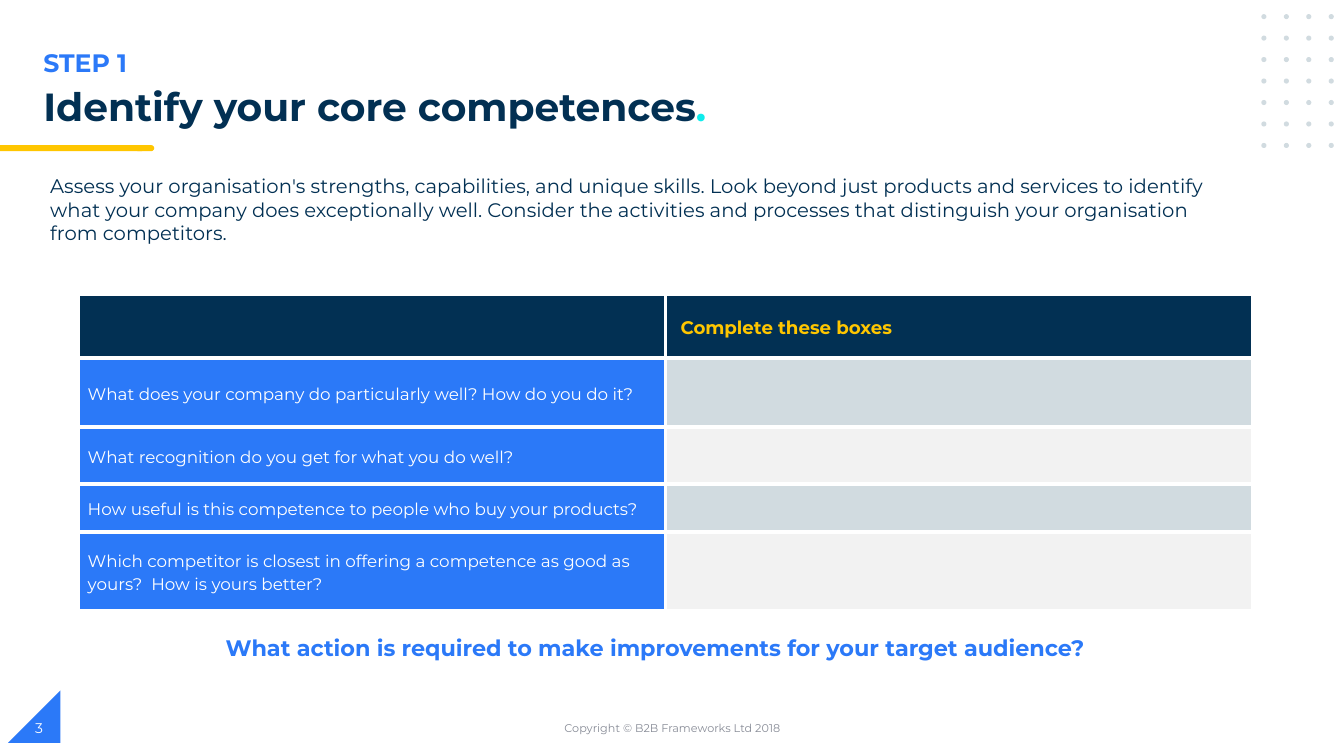
"""Build the Step 1 worksheet slide on core competences."""
from lxml import etree
from pptx import Presentation, util as u
from pptx.dml.color import RGBColor
from pptx.enum import shapes, text
from pptx.oxml import ns

NAVY = RGBColor(0x02, 0x30, 0x53)
BLUE = RGBColor(0x2B, 0x79, 0xF8)
GOLD = RGBColor(0xFF, 0xC6, 0x00)
CYAN = RGBColor(0x0E, 0xEC, 0xEC)
MIST = RGBColor(0xD1, 0xDB, 0xE0)
PALE = RGBColor(0xF2, 0xF2, 0xF2)
GREY = RGBColor(0x88, 0x8C, 0x97)
WHITE = RGBColor(0xFF, 0xFF, 0xFF)

deck = Presentation()
deck.slide_width, deck.slide_height = u.Inches(13.333), u.Inches(7.5)
page = deck.slides.add_slide(deck.slide_layouts.get_by_name("Title Only"))
COLUMN, ROW = deck.slide_width / 100, deck.slide_height / 100


def area(left, top, width, height):
    """Turn percentages of the slide into lengths."""
    return [round(n * step) for n, step in zip((left, top, width, height), (COLUMN, ROW) * 2)]


def write(para, words, size, colour, bold=False):
    """Set the text of a paragraph and its font."""
    para.text = words
    para.font.name, para.font.size = "Montserrat", u.Pt(size)
    para.font.bold, para.font.color.rgb = bold, colour


KIND = shapes.MSO_SHAPE
decorations = [
    (KIND.RIGHT_TRIANGLE, BLUE, (0.6, 91.33, 3.9, 6.93)),
    (KIND.FLOWCHART_TERMINATOR, GOLD, (10.05, 19.2, 1.43, 0.8)),
    (KIND.RECTANGLE, GOLD, (0, 19.2, 10.58, 0.8)),
]
for row in range(7):
    for column in range(4):
        place = (93.85 + 1.67 * column, 1.87 + 2.84 * row, 0.38, 0.67)
        decorations.append((KIND.OVAL, MIST, place))
for kind, colour, place in decorations:
    shape = page.shapes.add_shape(kind, *area(*place))
    shape.shadow.inherit = False
    shape.fill.solid()
    shape.fill.fore_color.rgb = colour
    shape.line.fill.background()
    if kind == KIND.RIGHT_TRIANGLE:
        shape.element.spPr.xfrm.set("flipH", "1")

title = page.shapes.title
title.left, title.top, title.width, title.height = area(2.48, 10.93, 58.21, 5.33)
title.text_frame.vertical_anchor = text.MSO_ANCHOR.TOP
title.text_frame.auto_size = text.MSO_AUTO_SIZE.NONE
heading = title.text_frame.paragraphs[0]
write(heading, "Identify your core competences", 28, NAVY, True)
heading.alignment, heading.line_spacing = text.PP_ALIGN.LEFT, 0.9
full_stop = heading.add_run()
full_stop.text = "."
full_stop.font.color.rgb = CYAN

INTRO = (
    "Assess your organisation's strengths, capabilities, and unique skills. "
    "Look beyond just products and services to identify what your company does "
    "exceptionally well. Consider the activities and processes that distinguish "
    "your organisation from competitors."
)
LEFT, CENTER = text.PP_ALIGN.LEFT, text.PP_ALIGN.CENTER
TOP, MIDDLE = text.MSO_ANCHOR.TOP, text.MSO_ANCHOR.MIDDLE
for words, place, size, colour, bold, align, anchor in (
    ("STEP 1", (2.48, 5.6, 50.19, 5.33), 18, BLUE, True, LEFT, TOP),
    (INTRO, (3, 22.4, 88.6, 10.8), 14, NAVY, False, LEFT, TOP),
    ("What action is required to make improvements for your target audience?",
     (16.05, 83.2, 66.24, 4.93), 16, BLUE, True, LEFT, TOP),
    ("Copyright © B2B Frameworks Ltd 2018",
     (33.16, 93.6, 33.76, 5.33), 8, GREY, False, CENTER, MIDDLE),
    ("3", (1.88, 93.6, 22.5, 5.33), 10, WHITE, False, LEFT, MIDDLE),
):
    box = page.shapes.add_textbox(*area(*place))
    box.text_frame.word_wrap = True
    box.text_frame.vertical_anchor = anchor
    para = box.text_frame.paragraphs[0]
    write(para, words, size, colour, bold)
    para.alignment = align

worksheet = (
    ("", 8.4, NAVY, NAVY),
    ("What does your company do particularly well? How do you do it?", 9.2, BLUE, MIST),
    ("What recognition do you get for what you do well?", 7.47, BLUE, PALE),
    ("How useful is this competence to people who buy your products?", 6.4, BLUE, MIST),
    ("Which competitor is closest in offering a competence as good as yours?  "
     "How is yours better?", 10.4, BLUE, PALE),
)
frame = page.shapes.add_table(len(worksheet), 2, *area(5.78, 38.93, 87.47, 41.87))
table = frame.table
for table_row, (question, height, *fills) in zip(table.rows, worksheet):
    table_row.height = round(height * ROW)
    for cell, fill in zip(table_row.cells, fills):
        cell.vertical_anchor = MIDDLE
        cell.margin_top = cell.margin_bottom = 0
        for side in ("a:lnL", "a:lnR", "a:lnT", "a:lnB"):
            border = etree.SubElement(cell._tc.get_or_add_tcPr(), ns.qn(side), w=str(u.Pt(3)))
            paint = etree.SubElement(border, ns.qn("a:solidFill"))
            etree.SubElement(paint, ns.qn("a:srgbClr"), val=str(WHITE))
        cell.fill.solid()
        cell.fill.fore_color.rgb = fill
    if question:
        para = table_row.cells[0].text_frame.paragraphs[0]
        write(para, question, 12, WHITE)
        para.line_spacing = 1.15

answer_heading = table.cell(0, 1)
answer_heading.margin_left = u.Inches(0.15)
para = answer_heading.text_frame.paragraphs[0]
write(para, "Complete these boxes", 13, GOLD, True)
para.line_spacing = 1.15

deck.save("out.pptx")
